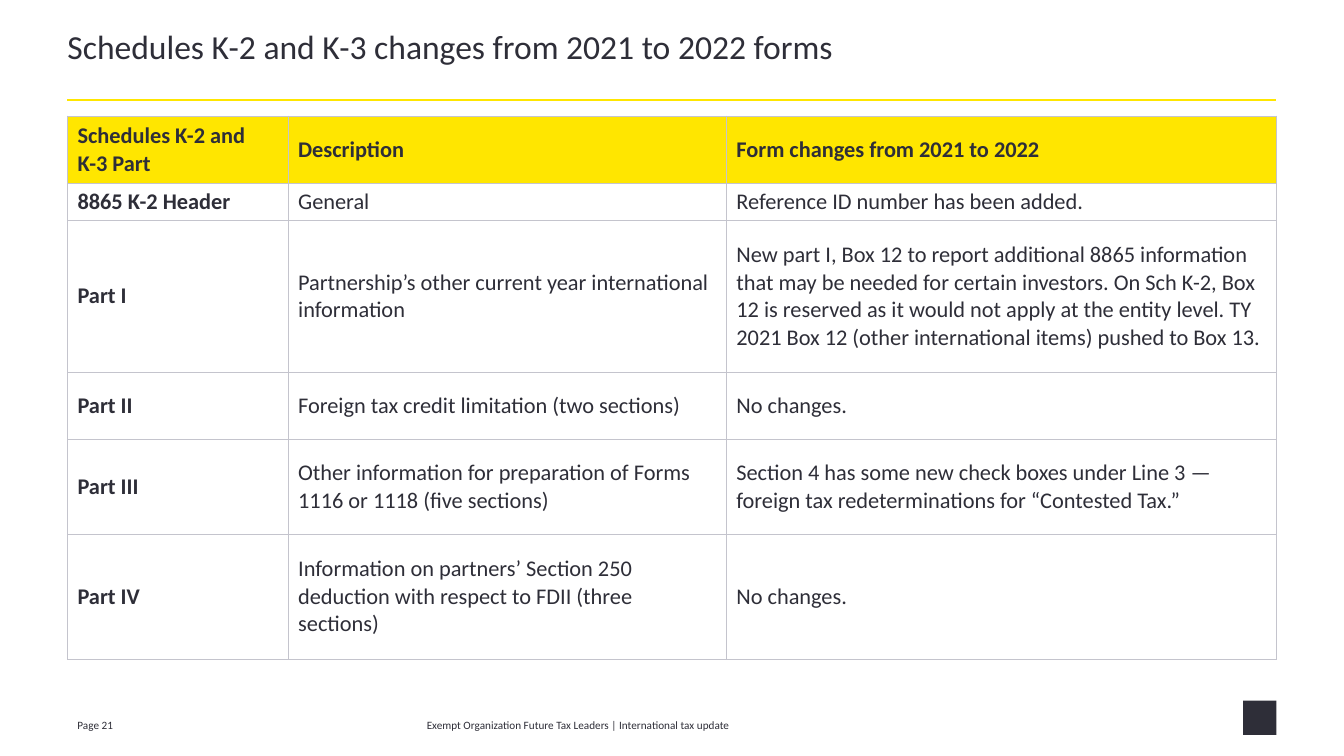
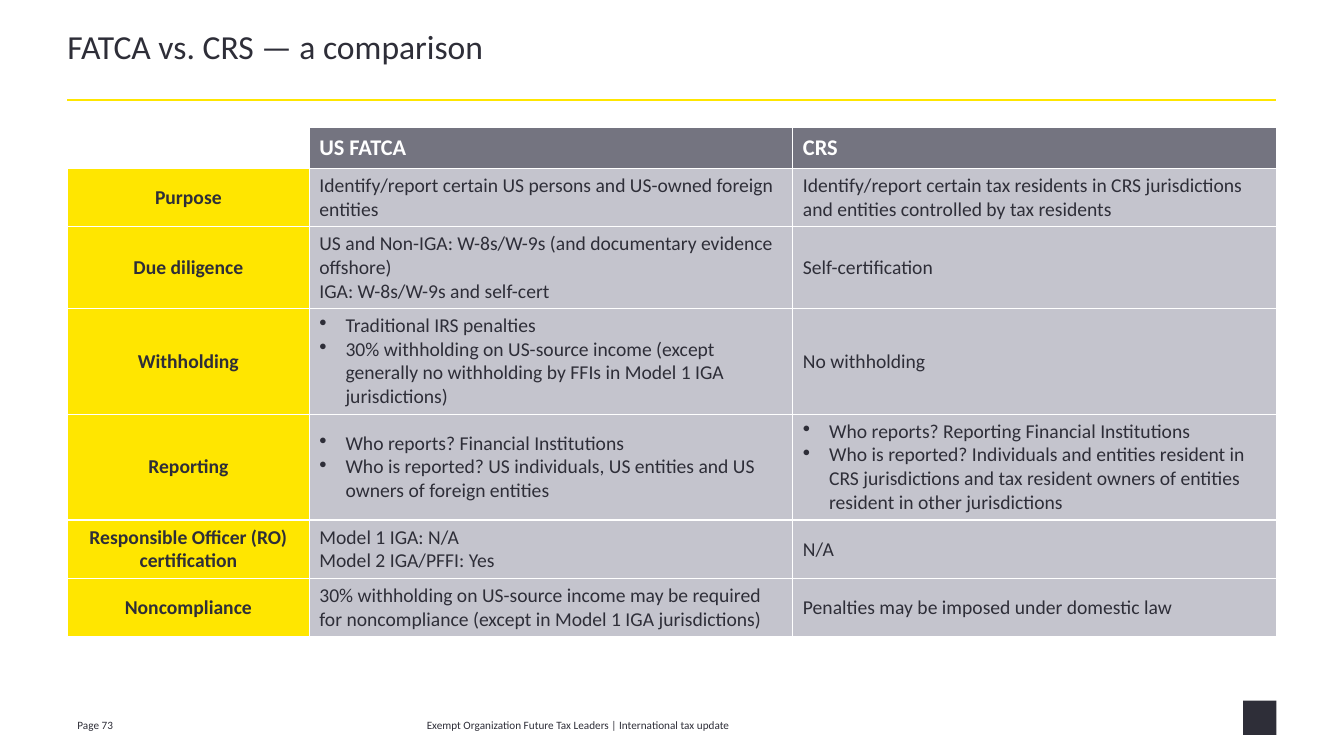
from dataclasses import dataclass

from lxml import etree
from pptx import Presentation
from pptx.dml.color import RGBColor
from pptx.enum.shapes import MSO_CONNECTOR, MSO_SHAPE
from pptx.enum.text import MSO_ANCHOR, PP_ALIGN
from pptx.oxml.ns import qn
from pptx.util import Inches, Pt

LEFT, CENTER = PP_ALIGN.LEFT, PP_ALIGN.CENTER
MIDDLE = MSO_ANCHOR.MIDDLE
STRAIGHT = MSO_CONNECTOR.STRAIGHT
RECTANGLE = MSO_SHAPE.RECTANGLE


@dataclass(frozen=True)
class Theme:
    font: str = "Calibri"
    ink: str = "2E2E38"
    yellow: str = "FFE600"
    slate: str = "747480"
    silver: str = "C4C4CD"
    white: str = "FFFFFF"
    title_size: float = 24
    header_size: float = 16
    dense_size: float = 14
    footer_size: float = 8


THEME = Theme()
MARGIN, CONTENT_WIDTH = 0.67, 12
FOOTER_TOP, FOOTER_HEIGHT = 7.08, 0.2
FOOTER = "Exempt Organization Future Tax Leaders | International tax update"


def write_text(frame, content, size, color=THEME.ink, bold=False, align=LEFT,
               spacing=None, inset=None):
    """Write a string (one paragraph per line) or a list (one bullet per item)."""
    frame.word_wrap = True
    if inset is not None:
        frame.margin_left = frame.margin_right = Inches(inset)
        frame.margin_top = frame.margin_bottom = Inches(inset)
    bulleted = isinstance(content, list)
    for index, line in enumerate(content if bulleted else content.split("\n")):
        paragraph = frame.paragraphs[0] if index == 0 else frame.add_paragraph()
        paragraph.alignment = align
        if spacing:
            paragraph.line_spacing = spacing
        if bulleted:
            properties = paragraph._p.get_or_add_pPr()
            properties.set("marL", str(Inches(0.26)))
            properties.set("indent", str(Inches(-0.26)))
            etree.SubElement(properties, qn("a:buSzPct")).set("val", "110000")
            etree.SubElement(properties, qn("a:buChar")).set("char", "•")
        run = paragraph.add_run()
        run.text = line
        run.font.name = THEME.font
        run.font.size = Pt(size)
        run.font.bold = bold
        run.font.color.rgb = RGBColor.from_string(color)


def set_borders(cell, color, width):
    """Draw all four cell borders; call before setting the cell's fill."""
    properties = cell._tc.get_or_add_tcPr()
    for side in ("a:lnL", "a:lnR", "a:lnT", "a:lnB"):
        border = etree.SubElement(properties, qn(side), w=str(Pt(width)))
        fill = etree.SubElement(border, qn("a:solidFill"))
        etree.SubElement(fill, qn("a:srgbClr")).set("val", color)


form_changes = {
    "title": "Schedules K-2 and K-3 changes from 2021 to 2022 forms",
    "page": 21,
    "top": 1.15,
    "columns": [2.19, 4.35, 5.46],
    "heights": [0.67, 0.37, 1.5, 0.67, 0.94, 1.24],
    "border": (THEME.silver, 0.5),
    "header_fill": THEME.yellow,
    "corner_fill": THEME.yellow,
    "header_color": THEME.ink,
    "label_fill": THEME.white,
    "label_align": LEFT,
    "body_fill": THEME.white,
    "body_size": THEME.header_size,
    "rows": [
        ("Schedules K-2 and K-3 Part", "Description", "Form changes from 2021 to 2022"),
        ("8865 K-2 Header", "General", "Reference ID number has been added."),
        ("Part I", "Partnership’s other current year international information",
         "New part I, Box 12 to report additional 8865 information that may be needed for "
         "certain investors. On Sch K-2, Box 12 is reserved as it would not apply at the "
         "entity level. TY 2021 Box 12 (other international items) pushed to Box 13."),
        ("Part II", "Foreign tax credit limitation (two sections)", "No changes."),
        ("Part III", "Other information for preparation of Forms 1116 or 1118 (five sections)",
         "Section 4 has some new check boxes under Line 3 —foreign tax redeterminations "
         "for “Contested Tax.”"),
        ("Part IV", "Information on partners’ Section 250 deduction with respect to FDII "
         "(three sections)", "No changes."),
    ],
}

regime_comparison = {
    "title": "FATCA vs. CRS — a comparison",
    "page": 73,
    "top": 1.26,
    "columns": [2.4, 4.8, 4.8],
    "heights": [0.41, 0.58, 0.81, 1.05, 1.05, 0.58, 0.58],
    "border": (THEME.white, 1),
    "header_fill": THEME.slate,
    "corner_fill": THEME.white,
    "header_color": THEME.white,
    "label_fill": THEME.yellow,
    "label_align": CENTER,
    "body_fill": THEME.silver,
    "body_size": THEME.dense_size,
    "rows": [
        ("", "US FATCA", "CRS"),
        ("Purpose", "Identify/report certain US persons and US-owned foreign entities",
         "Identify/report certain tax residents in CRS jurisdictions and entities "
         "controlled by tax residents"),
        ("Due diligence",
         "US and Non-IGA: W-8s/W-9s (and documentary evidence offshore)\n"
         "IGA: W-8s/W-9s and self-cert", "Self-certification"),
        ("Withholding",
         ["Traditional IRS penalties",
          "30% withholding on US-source income (except generally no withholding by FFIs "
          "in Model 1 IGA jurisdictions)"], "No withholding"),
        ("Reporting",
         ["Who reports? Financial Institutions",
          "Who is reported? US individuals, US entities and US owners of foreign entities"],
         ["Who reports? Reporting Financial Institutions",
          "Who is reported? Individuals and entities resident in CRS jurisdictions and tax "
          "resident owners of entities resident in other jurisdictions"]),
        ("Responsible Officer (RO) certification",
         "Model 1 IGA: N/A\nModel 2 IGA/PFFI: Yes", "N/A"),
        ("Noncompliance",
         "30% withholding on US-source income may be required for noncompliance (except in "
         "Model 1 IGA jurisdictions)", "Penalties may be imposed under domestic law"),
    ],
}

deck = Presentation()
deck.slide_width, deck.slide_height = Inches(13.34), Inches(7.5)
blank_layout = deck.slide_layouts[6]

for content in (form_changes, regime_comparison):
    shapes = deck.slides.add_slide(blank_layout).shapes

    title = shapes.add_textbox(Inches(MARGIN), Inches(0.32), Inches(CONTENT_WIDTH), Inches(0.65))
    write_text(title.text_frame, content["title"], THEME.title_size, spacing=0.85, inset=0)

    title_rule = shapes.add_connector(STRAIGHT, Inches(MARGIN), Inches(0.99),
                                      Inches(MARGIN + CONTENT_WIDTH), Inches(0.99))
    title_rule.line.color.rgb = RGBColor.from_string(THEME.yellow)
    title_rule.line.width = Pt(1.5)
    etree.SubElement(title_rule._element.spPr, qn("a:effectLst"))

    for left, width, words, align in ((MARGIN, 0.73, f"Page {content['page']}", LEFT),
                                      (3.54, 4.4, FOOTER, CENTER)):
        footer = shapes.add_textbox(Inches(left), Inches(FOOTER_TOP),
                                    Inches(width), Inches(FOOTER_HEIGHT))
        write_text(footer.text_frame, words, THEME.footer_size, align=align)

    corner_mark = shapes.add_shape(RECTANGLE, Inches(12.34), Inches(6.95),
                                   Inches(0.33), Inches(0.34))
    corner_mark.shadow.inherit = False
    corner_mark.fill.solid()
    corner_mark.fill.fore_color.rgb = RGBColor.from_string(THEME.ink)
    corner_mark.line.fill.background()

    rows = content["rows"]
    table = shapes.add_table(len(rows), len(content["columns"]), Inches(MARGIN),
                             Inches(content["top"]), Inches(CONTENT_WIDTH),
                             Inches(sum(content["heights"]))).table
    table.horz_banding = False
    for column, width in zip(table.columns, content["columns"]):
        column.width = Inches(width)
    for row, height in zip(table.rows, content["heights"]):
        row.height = Inches(height)

    for row_index, row in enumerate(rows):
        for column_index, words in enumerate(row):
            is_header, is_label = row_index == 0, column_index == 0
            if is_header:
                fill = content["corner_fill" if is_label else "header_fill"]
            else:
                fill = content["label_fill" if is_label else "body_fill"]
            cell = table.cell(row_index, column_index)
            cell.vertical_anchor = MIDDLE
            set_borders(cell, *content["border"])
            cell.fill.solid()
            cell.fill.fore_color.rgb = RGBColor.from_string(fill)
            write_text(cell.text_frame, words,
                       THEME.header_size if is_header else content["body_size"],
                       color=content["header_color"] if is_header else THEME.ink,
                       bold=is_header or is_label,
                       align=content["label_align"] if is_label else LEFT)

deck.save("out.pptx")
